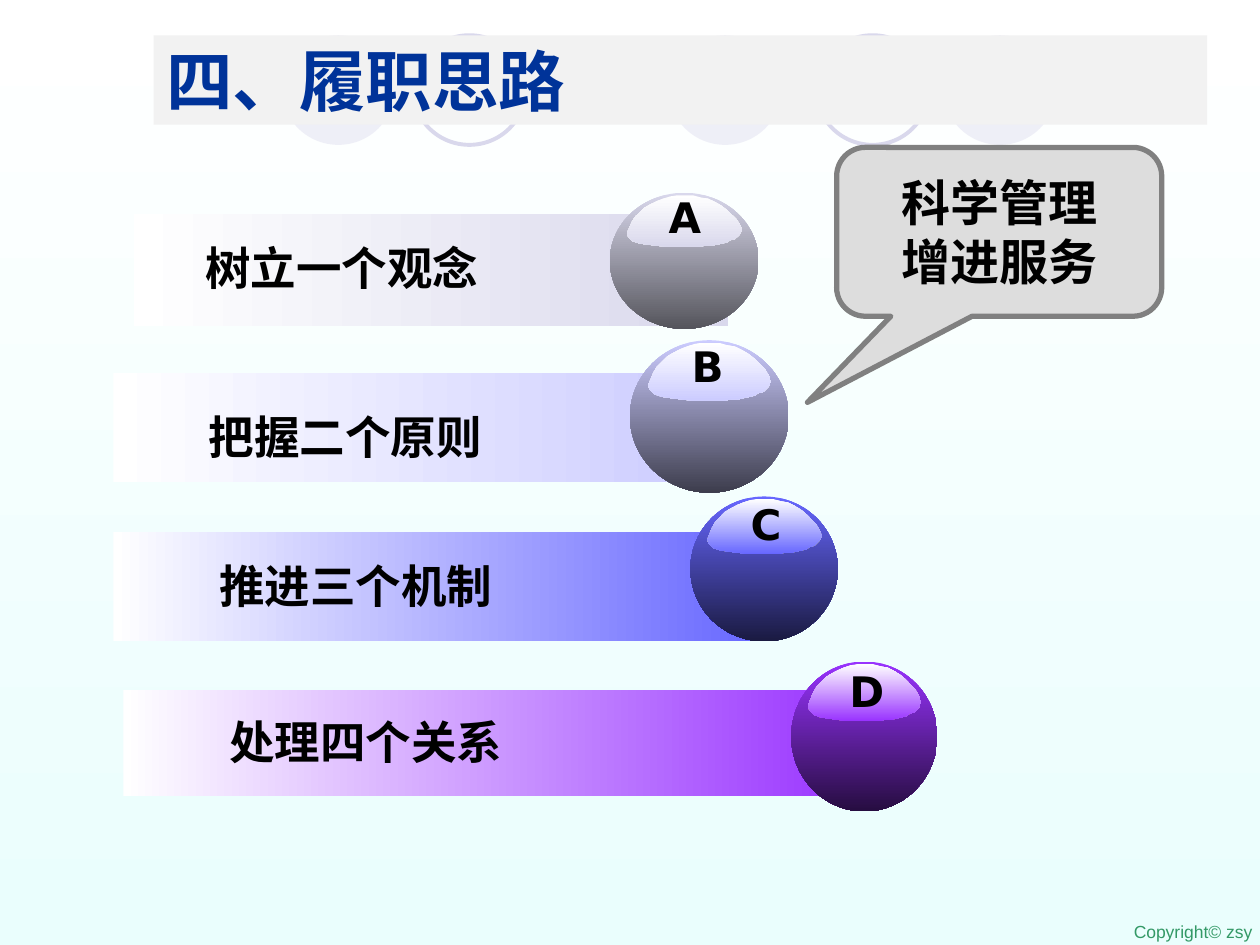
from lxml.etree import SubElement
from pptx import Presentation
from pptx.dml.color import RGBColor
from pptx.enum.shapes import MSO_SHAPE
from pptx.enum.text import MSO_ANCHOR, MSO_AUTO_SIZE, PP_ALIGN
from pptx.oxml.ns import qn
from pptx.util import Inches, Pt

TITLE = "四、履职思路"
TITLE_BOX = (1.22, 0.28, 8.36, 0.71)
CALLOUT = ["科学管理", "增进服务"]
COPYRIGHT = "Copyright© zsy"
CJK = "Noto Sans CJK SC"
LILAC = "D9D8EC"

FILLED_CIRCLES = [5.31, 7.49, 2.24]
RING_CIRCLES = [6.48, 3.28]

STEPS = [
    dict(letter="A", text="树立一个观念", light="D9D8EC", dark="55555C",
         bar=(1.06, 1.7, 4.72, 0.89), ball=(4.84, 1.53, 1.18, 1.08),
         label=(1.53, 1.86, 3.39, 0.53), letter_box=(5.16, 1.47, 0.55, 0.5)),
    dict(letter="B", text="把握二个原则", light="CCCCFF", dark="3D3D4D",
         bar=(0.9, 2.96, 4.73, 0.87), ball=(5, 2.7, 1.26, 1.21),
         label=(1.56, 3.2, 3.32, 0.54), letter_box=(5.39, 2.65, 0.45, 0.5)),
    dict(letter="C", text="推进三个机制", light="6767FF", dark="1A1A41",
         bar=(0.9, 4.22, 5.15, 0.87), ball=(5.48, 3.94, 1.17, 1.15),
         label=(1.64, 4.38, 3.35, 0.53), letter_box=(5.86, 3.91, 0.44, 0.5)),
    dict(letter="D", text="处理四个关系", light="9933FF", dark="260D40",
         bar=(0.98, 5.48, 5.84, 0.84), ball=(6.28, 5.25, 1.16, 1.19),
         label=(1.72, 5.62, 3.2, 0.54), letter_box=(6.64, 5.23, 0.48, 0.5)),
]

GLOSS_SIZE = (98, 46)
GLOSS = [
    (96, 26), (97, 28), (98, 31), (97, 33), (96, 35), (94, 37), (92, 39),
    (88, 40), (85, 42), (81, 43), (76, 44), (72, 45), (66, 45), (61, 46),
    (35, 46), (26, 45), (18, 44), (11, 43), (8, 42), (5, 41), (3, 39),
    (1, 37), (0, 34), (1, 31), (2, 29), (4, 24), (7, 19), (11, 15),
    (15, 11), (20, 8), (26, 5), (31, 3), (37, 1), (43, 0), (56, 0),
    (63, 2), (69, 3), (75, 6), (80, 9), (85, 13), (89, 17), (93, 21),
]


def rgb(value):
    """Turn a hex string into a colour."""
    return RGBColor.from_string(value)


def inches(box):
    """Convert a box to lengths."""
    return [Inches(v) for v in box]


def gradient(fill, colors, angle):
    """Apply a two-stop linear gradient."""
    fill.gradient()
    fill.gradient_angle = angle
    for stop, color in zip(fill.gradient_stops, colors):
        stop.color.rgb = rgb(color)


def solid(shape, color):
    """Fill a shape with one colour."""
    shape.fill.solid()
    shape.fill.fore_color.rgb = rgb(color)


def outline(shape, color, width):
    """Draw the line around a shape."""
    shape.line.color.rgb = rgb(color)
    shape.line.width = Pt(width)


def add_shape(s, kind, box):
    """Add a preset shape without shadow or line."""
    sp = s.shapes.add_shape(kind, *inches(box))
    sp.shadow.inherit = False
    sp.line.fill.background()
    return sp


def write(sp, lines, size, color="000000", name="Arial", bold=True,
          align=PP_ALIGN.LEFT, anchor=MSO_ANCHOR.TOP, wrap=True):
    """Write lines of text into a shape."""
    tf = sp.text_frame
    frame = dict(word_wrap=wrap, vertical_anchor=anchor, auto_size=MSO_AUTO_SIZE.NONE)
    for key, value in frame.items():
        setattr(tf, key, value)
    for i, line in enumerate(lines):
        p = tf.add_paragraph() if i else tf.paragraphs[0]
        p.alignment = align
        r = p.add_run()
        r.text = line
        for key, value in dict(size=Pt(size), bold=bold, name=name).items():
            setattr(r.font, key, value)
        r.font.color.rgb = rgb(color)
        SubElement(r.font._element, qn("a:ea"), typeface=CJK)


def add_text(s, box, text, size, **style):
    """Add a text box with one line."""
    write(s.shapes.add_textbox(*inches(box)), [text], size, **style)


def add_circles(s):
    """Add the row of pale circles behind the title."""
    for x in FILLED_CIRCLES + RING_CIRCLES:
        sp = add_shape(s, MSO_SHAPE.OVAL, (x, 0.28, 0.89, 0.87))
        if x in RING_CIRCLES:
            sp.fill.background()
            outline(sp, LILAC, 2.25)
        else:
            solid(sp, LILAC)
            color = sp.element.spPr.find(qn("a:solidFill"))[0]
            SubElement(color, qn("a:alpha"), val="40000")


def add_title(s):
    """Format the title and place it over the circles."""
    sp = s.shapes.title
    sp.left, sp.top, sp.width, sp.height = inches(TITLE_BOX)
    solid(sp, "F2F2F2")
    write(sp, [TITLE], 38, "003399", CJK, anchor=MSO_ANCHOR.MIDDLE)
    sp.element.getparent().append(sp.element)


def add_ball(s, step):
    """Add a shaded ball with its gloss and letter."""
    x, y, w, h = step["ball"]
    ball = add_shape(s, MSO_SHAPE.OVAL, step["ball"])
    gradient(ball.fill, (step["light"], step["dark"]), 270)
    scale = (Inches(w * 0.775) / GLOSS_SIZE[0], Inches(h * 0.38) / GLOSS_SIZE[1])
    builder = s.shapes.build_freeform(*GLOSS[0], scale=scale)
    builder.add_line_segments(GLOSS[1:], close=True)
    gloss = builder.convert_to_shape(Inches(x + w * 0.115), Inches(y + 0.02))
    gloss.shadow.inherit = False
    gloss.line.fill.background()
    gradient(gloss.fill, ("FFFFFF", step["light"]), 270)
    add_text(s, step["letter_box"], step["letter"], 24, name="DejaVu Sans",
             align=PP_ALIGN.CENTER, wrap=False)


def main():
    """Build the slide."""
    prs = Presentation()
    prs.slide_width, prs.slide_height = Inches(10), Inches(7.5)
    s = prs.slides.add_slide(prs.slide_layouts[5])
    gradient(s.background.fill, ("FFFFFF", "EAFEFD"), 270)
    add_circles(s)
    add_title(s)
    add_text(s, (8.9, 7.26, 1.14, 0.27), COPYRIGHT, 10, color="339966",
             bold=False, wrap=False)
    for step in STEPS:
        bar = add_shape(s, MSO_SHAPE.RECTANGLE, step["bar"])
        gradient(bar.fill, ("FFFFFF", step["light"]), 0)
        add_text(s, step["label"], step["text"], 26)
    for step in STEPS:
        add_ball(s, step)
    callout = add_shape(s, MSO_SHAPE.ROUNDED_RECTANGULAR_CALLOUT, (6.64, 1.17, 2.58, 1.34))
    for i, value in enumerate((-0.59, 1.01, 0.17)):
        callout.adjustments[i] = value
    solid(callout, "DDDDDD")
    outline(callout, "808080", 3)
    write(callout, CALLOUT, 28, align=PP_ALIGN.CENTER, anchor=MSO_ANCHOR.MIDDLE)
    prs.save("out.pptx")


if __name__ == "__main__":
    main()
